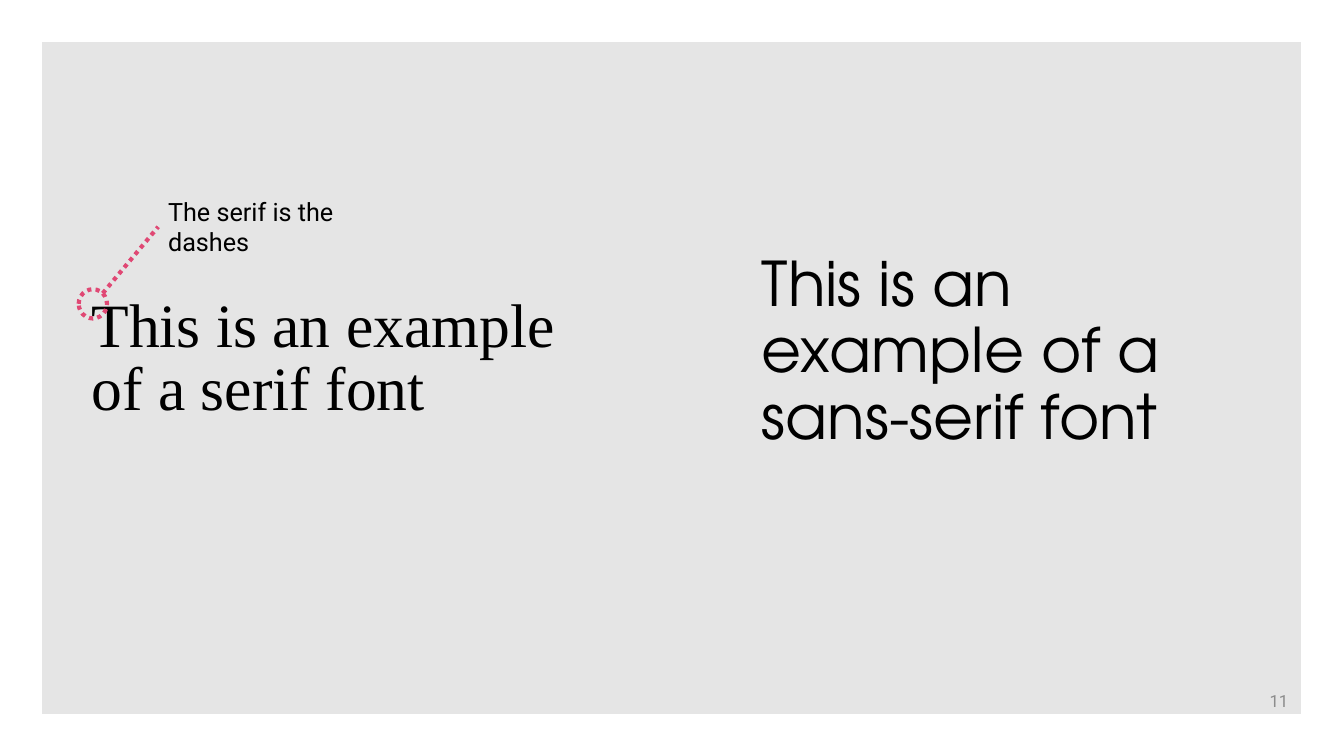
from dataclasses import dataclass, field

from lxml.etree import SubElement
from pptx import Presentation
from pptx.dml.color import RGBColor
from pptx.enum.dml import MSO_LINE
from pptx.enum.shapes import MSO_CONNECTOR, MSO_SHAPE
from pptx.enum.text import MSO_ANCHOR, PP_ALIGN
from pptx.oxml.ns import qn
from pptx.util import Pt

COLOURS = {
    "background": "FFFFFF",
    "panel": "000000",
    "text": "000000",
    "number": "8C8C8C",
    "accent": "E04874",
}
PANEL_OPACITY = 10


@dataclass(frozen=True)
class Box:
    left: float
    top: float
    width: float
    height: float

    def lengths(self) -> tuple:
        return Pt(self.left), Pt(self.top), Pt(self.width), Pt(self.height)


@dataclass(frozen=True)
class Label:
    text: str
    box: Box
    style: dict = field(default_factory=dict)


LABELS = [
    Label("11", Box(711.4, 486, 216, 28.8),
          dict(size=12, colour="number", align=PP_ALIGN.RIGHT, anchor=MSO_ANCHOR.MIDDLE)),
    Label("This is an example of a serif font", Box(58.3, 208.8, 364.3, 93.6),
          dict(size=44, font="Times New Roman", line_spacing=0.85, space_before=10)),
    Label("This is an example of a sans-serif font", Box(537.1, 177.1, 364.3, 157.7),
          dict(size=44, font="TeX Gyre Adventor", line_spacing=0.9, space_before=10)),
    Label("The serif is the dashes", Box(113, 136.8, 145.4, 51.1), dict(size=18)),
]


def colour_of(name: str) -> RGBColor:
    return RGBColor.from_string(COLOURS[name])


def add_text(slide, text: str, box: Box, *, size: float, font: str = "Roboto",
             colour: str = "text", align=PP_ALIGN.LEFT, anchor=MSO_ANCHOR.TOP,
             line_spacing: float = 1.0, space_before: float = 0) -> None:
    frame = slide.shapes.add_textbox(*box.lengths()).text_frame
    frame.word_wrap = True
    frame.vertical_anchor = anchor
    paragraph = frame.paragraphs[0]
    paragraph.alignment = align
    paragraph.line_spacing = line_spacing
    paragraph.space_before = Pt(space_before)
    run = paragraph.add_run()
    run.text = text
    run.font.size = Pt(size)
    run.font.name = font
    run.font.color.rgb = colour_of(colour)


def add_panel(slide, box: Box) -> None:
    panel = slide.shapes.add_shape(MSO_SHAPE.RECTANGLE, *box.lengths())
    panel.shadow.inherit = False
    panel.fill.solid()
    panel.fill.fore_color.rgb = colour_of("panel")
    fill_colour = panel.fill._xPr.find(qn("a:solidFill"))[0]
    SubElement(fill_colour, qn("a:alpha"), val=str(PANEL_OPACITY * 1000))
    panel.line.color.rgb = colour_of("background")
    panel.line.width = Pt(10)


def format_dotted(line) -> None:
    line.color.rgb = colour_of("accent")
    line.width = Pt(3)
    line.dash_style = MSO_LINE.ROUND_DOT


def add_serif_marker(slide, circle_box: Box, start: tuple[float, float],
                     end: tuple[float, float]) -> None:
    circle = slide.shapes.add_shape(MSO_SHAPE.OVAL, *circle_box.lengths())
    circle.shadow.inherit = False
    circle.fill.background()
    format_dotted(circle.line)
    pointer = slide.shapes.add_connector(
        MSO_CONNECTOR.STRAIGHT, *(Pt(value) for value in start + end))
    format_dotted(pointer.line)
    SubElement(pointer._element.spPr, qn("a:effectLst"))


def main() -> None:
    presentation = Presentation()
    presentation.slide_width = Pt(960)
    presentation.slide_height = Pt(540)
    slide = presentation.slides.add_slide(presentation.slide_layouts[6])
    slide.background.fill.solid()
    slide.background.fill.fore_color.rgb = colour_of("background")
    add_panel(slide, Box(25.2, 25.2, 909.4, 489.6))
    for label in LABELS:
        add_text(slide, label.text, label.box, **label.style)
    add_serif_marker(slide, Box(56.2, 206.6, 20.2, 20.9), (73.4, 209.5), (113, 162))
    presentation.save("out.pptx")


if __name__ == "__main__":
    main()
